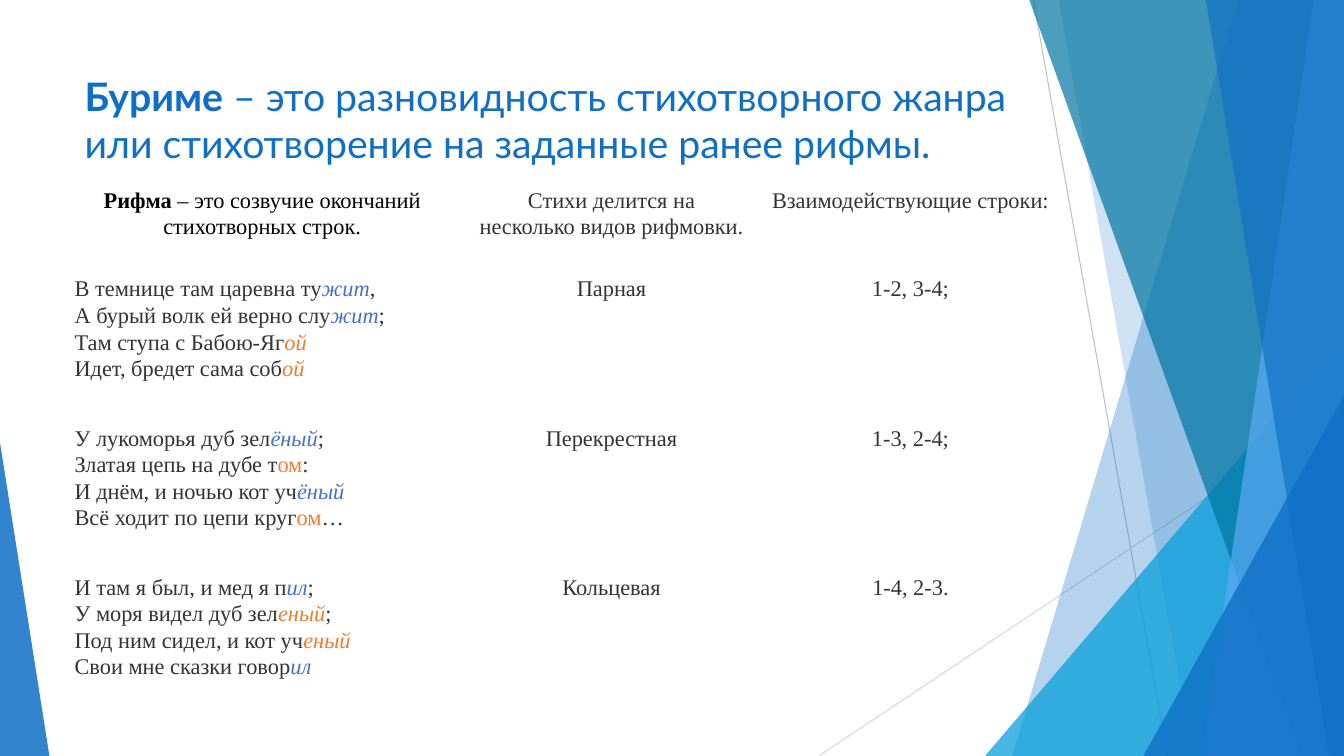
from lxml import etree
from pptx import Presentation
from pptx import util as u
from pptx.dml.color import RGBColor
from pptx.enum import shapes, text
from pptx.oxml.ns import qn

BLUE, CYAN, TEAL, SKY = "0F6FC6", "009DD9", "0076A3", "59AAF2"
INK, BLACK, RHYME_A, RHYME_B = "333333", "000000", "4472C4", "ED7D31"

deck = Presentation()
deck.slide_width, deck.slide_height = u.Inches(13.33), u.Inches(7.5)
slide = deck.slides.add_slide(deck.slide_layouts[5])


def at(across, down):
    """Turn percentages of the slide's width and height into lengths."""
    return (int(deck.slide_width * across / 100),
            int(deck.slide_height * down / 100))


def paint(fill, colour, opacity=100):
    fill.solid()
    fill.fore_color.rgb = RGBColor.from_string(colour)
    if opacity < 100:
        tint = fill.fore_color._xFill[0]
        etree.SubElement(tint, qn("a:alpha"), val=str(opacity * 1000))


# Thin lines behind the facets
for start, end, colour in [((76.89, 0), (86.87, 100), "BFBFBF"),
                           ((100, 53.73), (60.92, 100), "D9D9D9")]:
    ray = slide.shapes.add_connector(
        shapes.MSO_CONNECTOR.STRAIGHT, *at(*start), *at(*end))
    paint(ray.line.fill, colour)
    ray.line.width = u.Pt(0.75)
    etree.SubElement(ray._element.spPr, qn("a:effectLst"))

# Facets: a band runs to the right edge from (top x, bottom x);
# a peak stands on the bottom edge as (left, top, width, apex)
facets = [
    ((92.12, 75.32), BLUE, 30),
    ((78.77, 88.75), BLUE, 20),
    ((73.29, 44.4, 26.71, 1), CYAN, 72),
    ((76.59, 96.85), TEAL, 70),
    ((97.75, 89.42), SKY, 70),
    ((89.72, 98.87), BLUE, 65),
    ((85.07, 52.4, 14.93, 1), BLUE, 80),
    ((0, 58.53, 3.68, 0), BLUE, 85),
]
for outline, colour, opacity in facets:
    if len(outline) == 2:
        top_x, bottom_x = outline
        band = slide.shapes.build_freeform(*at(top_x, 0))
        band.add_line_segments(
            [at(100, 0), at(100, 100), at(bottom_x, 100)], close=True)
        facet = band.convert_to_shape()
    else:
        left, top, width, apex = outline
        facet = slide.shapes.add_shape(
            shapes.MSO_SHAPE.ISOSCELES_TRIANGLE,
            *at(left, top), *at(width, 100 - top))
        facet.adjustments[0] = apex
    paint(facet.fill, colour, opacity)
    facet.line.fill.background()
    facet.shadow.inherit = False

# Title
title = slide.shapes.title
title.left, title.top = at(5.55, 8.93)
title.width, title.height = at(70.52, 19.2)
title.text_frame.word_wrap = True
title.text_frame.auto_size = text.MSO_AUTO_SIZE.NONE
title.text_frame.vertical_anchor = text.MSO_ANCHOR.TOP
definition = title.text_frame.paragraphs[0]
definition.alignment = text.PP_ALIGN.LEFT
for words, bold in [
        ("Буриме", True),
        (" – это разновидность стихотворного жанра "
         "или стихотворение на заданные ранее рифмы.", False)]:
    run = definition.add_run()
    run.text = words
    run.font.name, run.font.size, run.font.bold = "Lato", u.Pt(28), bold
    paint(run.font.fill, BLUE)

# Table content: cells hold lines, lines hold (words, colour, style) runs
rows = [
    [[[("Рифма", BLACK, "b"),
       (" – это созвучие окончаний стихотворных строк.", BLACK, "")]],
     [[("Стихи делится на", INK, "")],
      [("несколько видов рифмовки.", INK, "")]],
     [[("Взаимодействующие строки:", INK, "")]]],
    [[[("В темнице там царевна ту", INK, ""), ("жит", RHYME_A, "i"),
       (",", INK, "")],
      [("А бурый волк ей верно слу", INK, ""), ("жит", RHYME_A, "i"),
       (";", INK, "")],
      [("Там ступа с Бабою-Яг", INK, ""), ("ой", RHYME_B, "i")],
      [("Идет, бредет сама соб", INK, ""), ("ой", RHYME_B, "i")]],
     [[("Парная", INK, "")]],
     [[("1-2, 3-4;", INK, "")]]],
    [[[("У лукоморья дуб зел", INK, ""), ("ёный", RHYME_A, "i"),
       (";", INK, "")],
      [("Златая цепь на дубе т", INK, ""), ("ом", RHYME_B, ""),
       (":", INK, "")],
      [("И днём, и ночью кот уч", INK, ""), ("ёный", RHYME_A, "i")],
      [("Всё ходит по цепи круг", INK, ""), ("ом", RHYME_B, ""),
       ("…", INK, "")]],
     [[("Перекрестная", INK, "")]],
     [[("1-3, 2-4;", INK, "")]]],
    [[[("И там я был, и мед я п", INK, ""), ("ил", RHYME_A, "i"),
       (";", INK, "")],
      [("У моря видел дуб зел", INK, ""), ("еный", RHYME_B, "i"),
       (";", INK, "")],
      [("Под ним сидел, и кот уч", INK, ""), ("еный", RHYME_B, "i")],
      [("Свои мне сказки говор", INK, ""), ("ил", RHYME_A, "i")]],
     [[("Кольцевая", INK, "")]],
     [[("1-4, 2-3.", INK, "")]]],
]

# Table frame without style or grid
column_shares, row_shares = [29.26, 22.73, 21.76], [11.73] + [19.73] * 3
rhymes = slide.shapes.add_table(
    len(rows), len(column_shares), *at(4.88, 24.67),
    *at(sum(column_shares), sum(row_shares))).table
rhymes.first_row = rhymes.horz_banding = False
style = rhymes._tbl.tblPr.find(qn("a:tableStyleId"))
style.text = "{2D5ABB26-0587-4C30-8999-92F81FD0307C}"
for column, share in zip(rhymes.columns, column_shares):
    column.width = at(share, 0)[0]
for row, share in zip(rhymes.rows, row_shares):
    row.height = at(0, share)[1]

# Table text
for r, row in enumerate(rows):
    for c, lines in enumerate(row):
        cell = rhymes.cell(r, c)
        is_verse = r > 0 and c == 0
        cell.fill.background()
        cell.margin_left = u.Inches(0.09 if is_verse else 0.07)
        cell.margin_right = u.Inches(0.07)
        cell.margin_top = cell.margin_bottom = 0
        for n, line in enumerate(lines):
            frame = cell.text_frame
            paragraph = frame.add_paragraph() if n else frame.paragraphs[0]
            paragraph.line_spacing = 1.07
            paragraph.alignment = (text.PP_ALIGN.LEFT if is_verse
                                   else text.PP_ALIGN.CENTER)
            for words, colour, look in line:
                run = paragraph.add_run()
                run.text = words
                run.font.name, run.font.size = "Times New Roman", u.Pt(16)
                run.font.bold, run.font.italic = look == "b", look == "i"
                paint(run.font.fill, colour)

deck.save("out.pptx")
